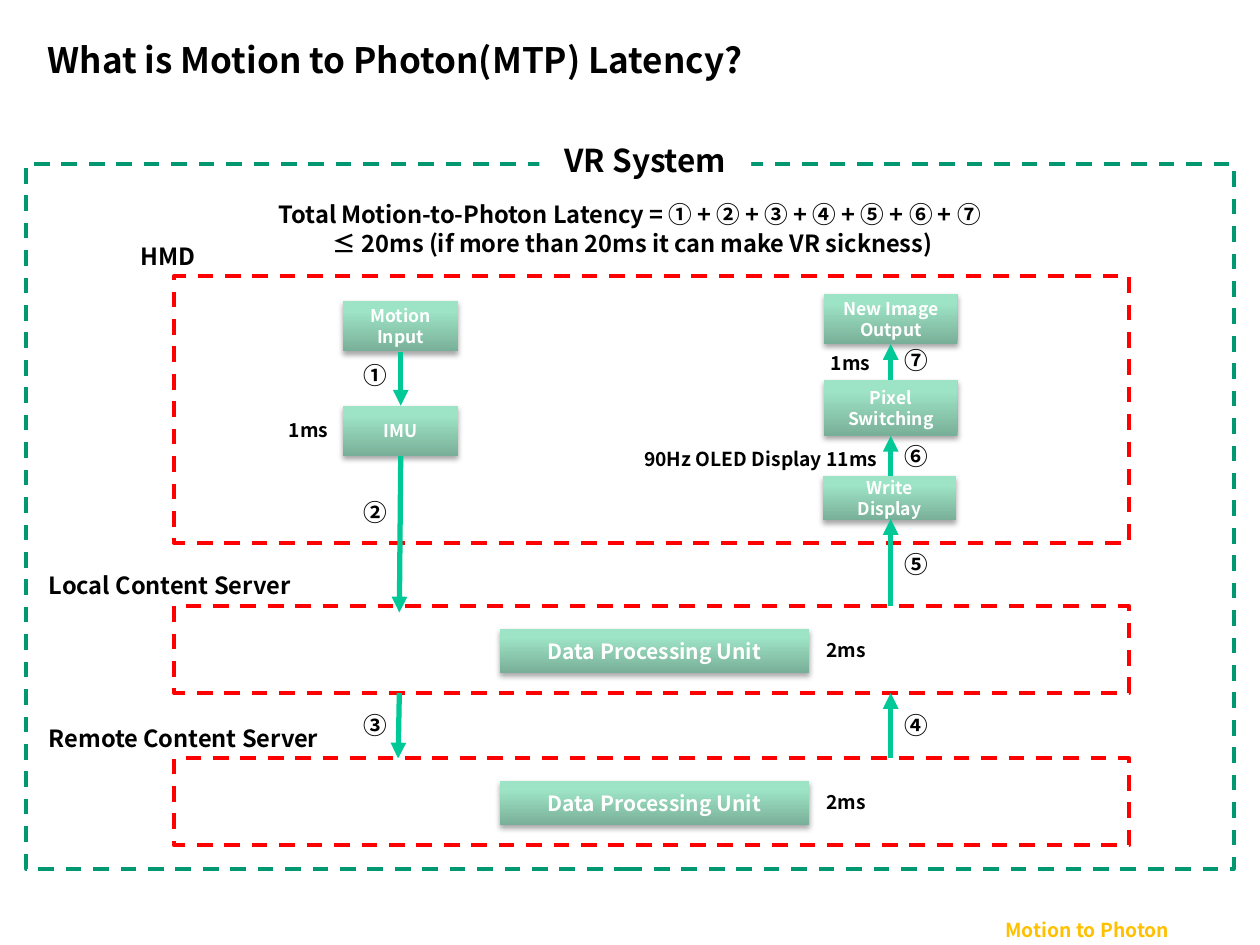
from lxml.etree import SubElement
from pptx import Presentation
from pptx.dml.color import RGBColor
from pptx.enum.dml import MSO_LINE_DASH_STYLE as Dash
from pptx.enum.shapes import MSO_CONNECTOR as Connector, MSO_SHAPE as Shape
from pptx.enum.text import MSO_ANCHOR as Anchor, PP_ALIGN as Align
from pptx.oxml.ns import qn
from pptx.util import Pt

FONT = "Noto Sans CJK KR"
BLACK, WHITE, RED, GREEN = "000000", "FFFFFF", "FF0000", "00C896"
LEFT_X, RIGHT_X = 229, 509  # arrow columns


def color(hex_text):
    return RGBColor.from_string(hex_text)


def write(shape, text, size, hex_text=BLACK, align=Align.LEFT):
    shape.text_frame.text = text
    for paragraph in shape.text_frame.paragraphs:
        paragraph.alignment = align
        font = paragraph.font
        font.name, font.size, font.bold = FONT, Pt(size), True
        font.color.rgb = color(hex_text)
        SubElement(font._rPr, qn("a:ea"), typeface=FONT)


def add_label(slide, text, left, top, width, height, size, wrap=False, **style):
    label = slide.shapes.add_textbox(Pt(left), Pt(top), Pt(width), Pt(height))
    label.text_frame.word_wrap = wrap
    write(label, text, size, **style)
    return label


def add_rectangle(slide, left, top, width, height):
    rectangle = slide.shapes.add_shape(
        Shape.RECTANGLE, Pt(left), Pt(top), Pt(width), Pt(height))
    rectangle.shadow.inherit = False
    return rectangle


def add_frame(slide, left, top, width, height, hex_text=RED):
    frame = add_rectangle(slide, left, top, width, height)
    frame.fill.background()
    frame.line.color.rgb = color(hex_text)
    frame.line.width = Pt(2.25)
    frame.line.dash_style = Dash.DASH


def add_block(slide, text, left, top, width, height, size=10):
    block = add_rectangle(slide, left, top, width, height)
    block.line.fill.background()
    block.fill.gradient()
    block.fill.gradient_angle = 90
    stops = block.fill.gradient_stops
    for stop, position, hex_text in zip(stops, (0, 0.8), ("79AF98", "9DE3C5")):
        stop.position = position
        stop.color.rgb = color(hex_text)
    # Soft shadow straight below
    effects = block._element.spPr.find(qn("a:effectLst"))
    shadow = SubElement(effects, qn("a:outerShdw"), blurRad=str(Pt(3.15)),
                        dist=str(Pt(1.8)), dir="5400000", rotWithShape="0")
    shade = SubElement(shadow, qn("a:srgbClr"), val=BLACK)
    SubElement(shade, qn("a:alpha"), val="35000")
    block.text_frame.vertical_anchor = Anchor.MIDDLE
    block.text_frame.word_wrap = True
    write(block, text, size, WHITE, Align.CENTER)


def add_arrow(slide, x1, y1, x2, y2):
    arrow = slide.shapes.add_connector(
        Connector.STRAIGHT, Pt(x1), Pt(y1), Pt(x2), Pt(y2))
    arrow.line.color.rgb = color(GREEN)
    arrow.line.width = Pt(3)
    SubElement(arrow.line._get_or_add_ln(), qn("a:tailEnd"), type="triangle")
    SubElement(arrow._element.spPr, qn("a:effectLst"))


def main():
    presentation = Presentation()
    presentation.slide_width, presentation.slide_height = Pt(720), Pt(540)
    slide = presentation.slides.add_slide(presentation.slide_layouts[6])

    # Footer and title
    add_label(slide, "Motion to Photon", 567.4, 521.3, 152.6, 18.7, 11,
              wrap=True, hex_text="FFC000")
    add_label(slide, "What is Motion to Photon(MTP) Latency?",
              20.2, 18.7, 437, 31.7, 20, wrap=True)

    # Processing steps
    for text, left, top, width, height in (
            ("Motion\nInput", 195.8, 172.1, 66.2, 28.8),
            ("IMU", 195.8, 231.8, 66.2, 28.8),
            ("Write Display", 470.2, 272.2, 76.3, 25.2),
            ("Pixel\nSwitching", 470.9, 217.4, 76.3, 31.7),
            ("New Image\nOutput", 470.9, 167.8, 76.3, 28.8)):
        add_block(slide, text, left, top, width, height)

    # Headset, then the two servers with their processing units
    add_frame(slide, 99.4, 157.7, 545.8, 152.6)
    add_label(slide, "HMD", 73.4, 134.6, 54.7, 26.6, 13.5)
    for name, top, width in (("Local Content Server", 346.3, 170.6),
                             ("Remote Content Server", 433.4, 189.4)):
        add_frame(slide, 99.4, top, 545.8, 49.7)
        add_label(slide, name, 20.9, top - 23.4, width, 26.6, 13.5)
        add_block(slide, "Data Processing Unit",
                  285.8, top + 13, 176.4, 25.2, size=12)
        add_label(slide, "2ms", 462.2, top + 14.8, 42.5, 20.9, 11,
                  wrap=True, align=Align.CENTER)

    # Whole system
    add_frame(slide, 15.1, 93.6, 689.8, 403.2, "009771")
    heading = add_label(slide, "VR System", 308.2, 77, 121, 33.1, 18,
                        align=Align.CENTER)
    heading.fill.solid()
    heading.fill.fore_color.rgb = color(WHITE)
    add_label(slide,
              "Total Motion-to-Photon Latency = ① + ② + ③ + ④ + ⑤ + ⑥ + ⑦\n"
              " ≤ 20ms (if more than 20ms it can make VR sickness)",
              115.2, 110.9, 489.6, 40.3, 13.5,
              wrap=True, align=Align.CENTER)

    # Numbered arrows: down on the left, up on the right
    for number, x1, y1, x2, y2, label_left, label_top in (
            ("①", LEFT_X, 201, LEFT_X, 231.8, 200.9, 203),
            ("②", LEFT_X, 260.6, 228.2, 350, 200.9, 280.8),
            ("③", 228.2, 396, 227.5, 433.4, 200.9, 402.5),
            ("④", RIGHT_X, 433.4, RIGHT_X, 396, 509.8, 402.5),
            ("⑤", RIGHT_X, 346.3, RIGHT_X, 296.6, 509.8, 311),
            ("⑥", RIGHT_X, 272.2, RIGHT_X, 249.1, 509.8, 249.1),
            ("⑦", RIGHT_X, 217.4, RIGHT_X, 196.6, 509.8, 194.4)):
        add_arrow(slide, x1, y1, x2, y2)
        add_label(slide, number, label_left, label_top, 31.7, 26.6, 13.5)

    # Durations inside the headset
    for text, left, top, width, wrap in (
            ("1ms", 456.5, 197.3, 59, True),
            ("90Hz OLED Display 11ms", 360.7, 252, 148.3, False),
            ("1ms", 146.9, 235.4, 59, True)):
        add_label(slide, text, left, top, width, 20.9, 11, wrap=wrap,
                  align=Align.CENTER)

    presentation.save("out.pptx")


if __name__ == "__main__":
    main()
